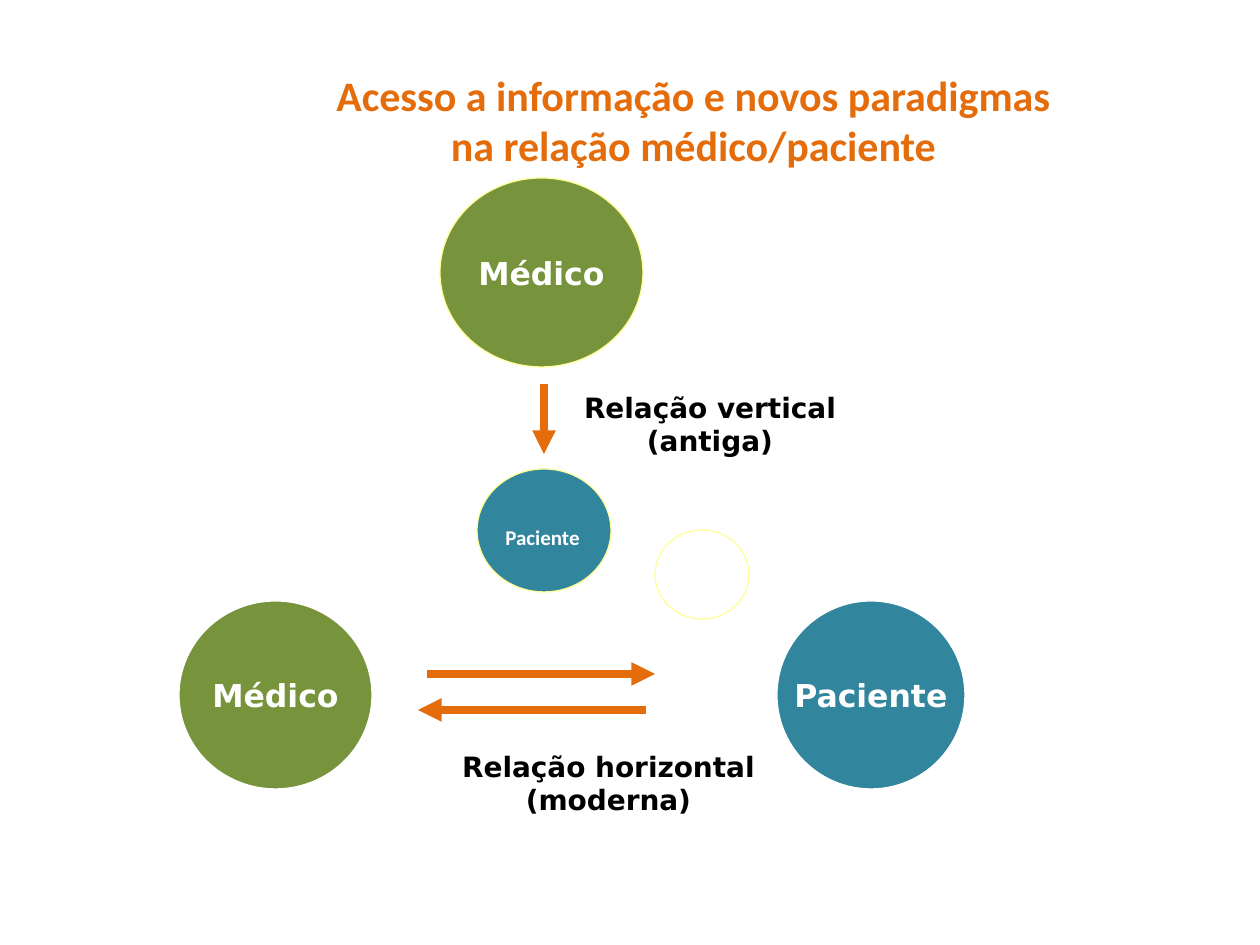
"""Build the slide on old and new doctor and patient relations."""
from dataclasses import dataclass
from typing import Optional

from lxml.etree import SubElement
from pptx import Presentation
from pptx.dml.color import RGBColor as Rgb
from pptx.enum.shapes import MSO_CONNECTOR as Conn, MSO_SHAPE as Kind
from pptx.enum.text import MSO_ANCHOR as Anchor, MSO_AUTO_SIZE as Fit, PP_ALIGN as Align
from pptx.oxml.ns import qn
from pptx.util import Emu, Pt

SCALE = 914400 / 126


@dataclass(frozen=True)
class Theme:
    green: str = "77933C"
    teal: str = "31859C"
    amber: str = "E46C0A"
    cream: str = "FFFF99"
    white: str = "FFFFFF"
    black: str = "000000"
    sans: str = "DejaVu Sans"
    head: str = "Calibri"
    title: int = 24
    role: int = 18
    note: int = 16
    small: int = 12
    edge: float = 0.75
    shaft: float = 4.5


@dataclass(frozen=True)
class Box:
    x: int
    y: int
    w: int
    h: int


@dataclass(frozen=True)
class Style:
    font: str
    size: int
    color: str
    align: Align = Align.CENTER


@dataclass(frozen=True)
class Disc:
    box: Box
    fill: str
    edge: str
    text: str = ""


@dataclass(frozen=True)
class Label:
    box: Box
    text: str
    style: Style
    fill: Optional[str] = None


@dataclass(frozen=True)
class Arrow:
    x1: int
    y1: int
    x2: int
    y2: int


THEME = Theme()
ROLE = Style(THEME.sans, THEME.role, THEME.white)
NOTE = Style(THEME.sans, THEME.note, THEME.black)
TITLE = Style(THEME.head, THEME.title, THEME.amber)
SMALL = Style(THEME.head, THEME.small, THEME.white, Align.LEFT)

DISCS = [
    Disc(Box(655, 530, 94, 89), THEME.white, THEME.cream),
    Disc(Box(179, 601, 193, 188), THEME.green, THEME.white, "Médico"),
    Disc(Box(440, 178, 203, 189), THEME.green, THEME.cream, "Médico"),
    Disc(Box(777, 601, 188, 188), THEME.teal, THEME.white, "Paciente"),
    Disc(Box(477, 469, 134, 123), THEME.teal, THEME.cream),
]
ARROWS = [
    Arrow(427, 674, 655, 674),
    Arrow(646, 710, 418, 710),
    Arrow(544, 384, 544, 454),
]
LABELS = [
    Label(Box(440, 743, 337, 81), "Relação horizontal\n(moderna)", NOTE),
    Label(Box(569, 384, 282, 81), "Relação vertical (antiga)", NOTE),
    Label(Box(493, 518, 102, 38), "Paciente", SMALL, THEME.teal),
    Label(Box(179, 63, 1029, 115),
          "Acesso a informação e novos paradigmas\nna relação médico/paciente", TITLE),
]


def px(n: int) -> Emu:
    """Turn pixels into EMU."""
    return Emu(round(n * SCALE))


def place(box: Box) -> tuple:
    """Give the box as left, top, width and height."""
    return px(box.x), px(box.y), px(box.w), px(box.h)


def write(frame, text: str, style: Style) -> None:
    """Set the text and format its runs."""
    frame.text = text
    for para in frame.paragraphs:
        para.alignment = style.align
        for run in para.runs:
            run.font.name = style.font
            run.font.size = Pt(style.size)
            run.font.bold = True
            run.font.color.rgb = Rgb.from_string(style.color)


def paint(shape, color: str) -> None:
    """Fill the shape and drop its shadow."""
    shape.shadow.inherit = False
    shape.fill.solid()
    shape.fill.fore_color.rgb = Rgb.from_string(color)


def draw_disc(slide, disc: Disc) -> None:
    """Draw a disc with its role in the middle."""
    shape = slide.shapes.add_shape(Kind.OVAL, *place(disc.box))
    paint(shape, disc.fill)
    shape.line.color.rgb = Rgb.from_string(disc.edge)
    shape.line.width = Pt(THEME.edge)
    if disc.text:
        frame = shape.text_frame
        frame.word_wrap = False
        frame.vertical_anchor = Anchor.MIDDLE
        write(frame, disc.text, ROLE)


def draw_arrow(slide, arrow: Arrow) -> None:
    """Draw a thick line with a head at its end."""
    ends = map(px, (arrow.x1, arrow.y1, arrow.x2, arrow.y2))
    line = slide.shapes.add_connector(Conn.STRAIGHT, *ends)
    line.line.color.rgb = Rgb.from_string(THEME.amber)
    line.line.width = Pt(THEME.shaft)
    SubElement(line.line._ln, qn("a:tailEnd"), type="triangle")
    SubElement(line._element.spPr, qn("a:effectLst"))


def draw_label(slide, label: Label) -> None:
    """Draw a text box, or a filled block if it has a color."""
    if label.fill:
        shape = slide.shapes.add_shape(Kind.RECTANGLE, *place(label.box))
        paint(shape, label.fill)
        shape.line.fill.background()
    else:
        shape = slide.shapes.add_textbox(*place(label.box))
    frame = shape.text_frame
    frame.word_wrap = True
    frame.auto_size = Fit.SHAPE_TO_FIT_TEXT
    frame.vertical_anchor = Anchor.TOP
    write(frame, label.text, label.style)


def main() -> None:
    """Build and save the slide."""
    deck = Presentation()
    deck.slide_width, deck.slide_height = px(1260), px(945)
    slide = deck.slides.add_slide(deck.slide_layouts[6])
    for disc in DISCS:
        draw_disc(slide, disc)
    for arrow in ARROWS:
        draw_arrow(slide, arrow)
    for label in LABELS:
        draw_label(slide, label)
    deck.save("out.pptx")


if __name__ == "__main__":
    main()
